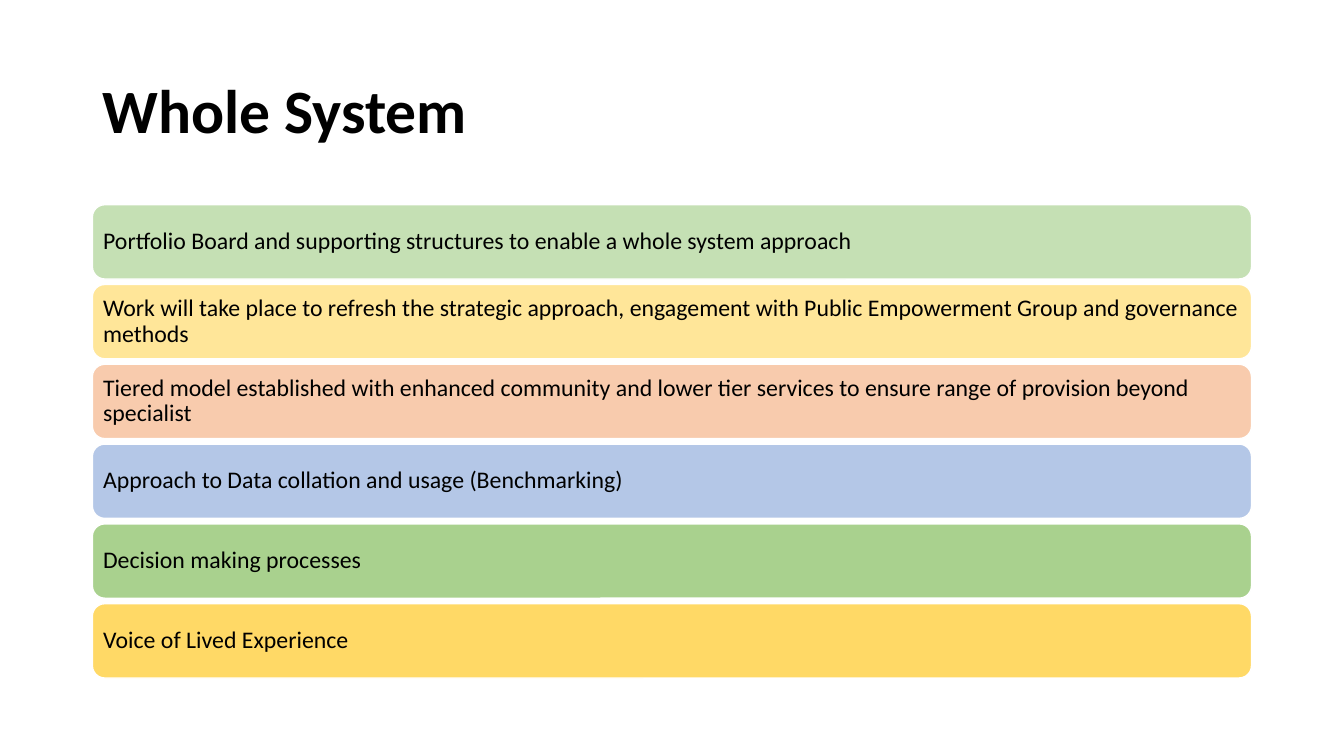
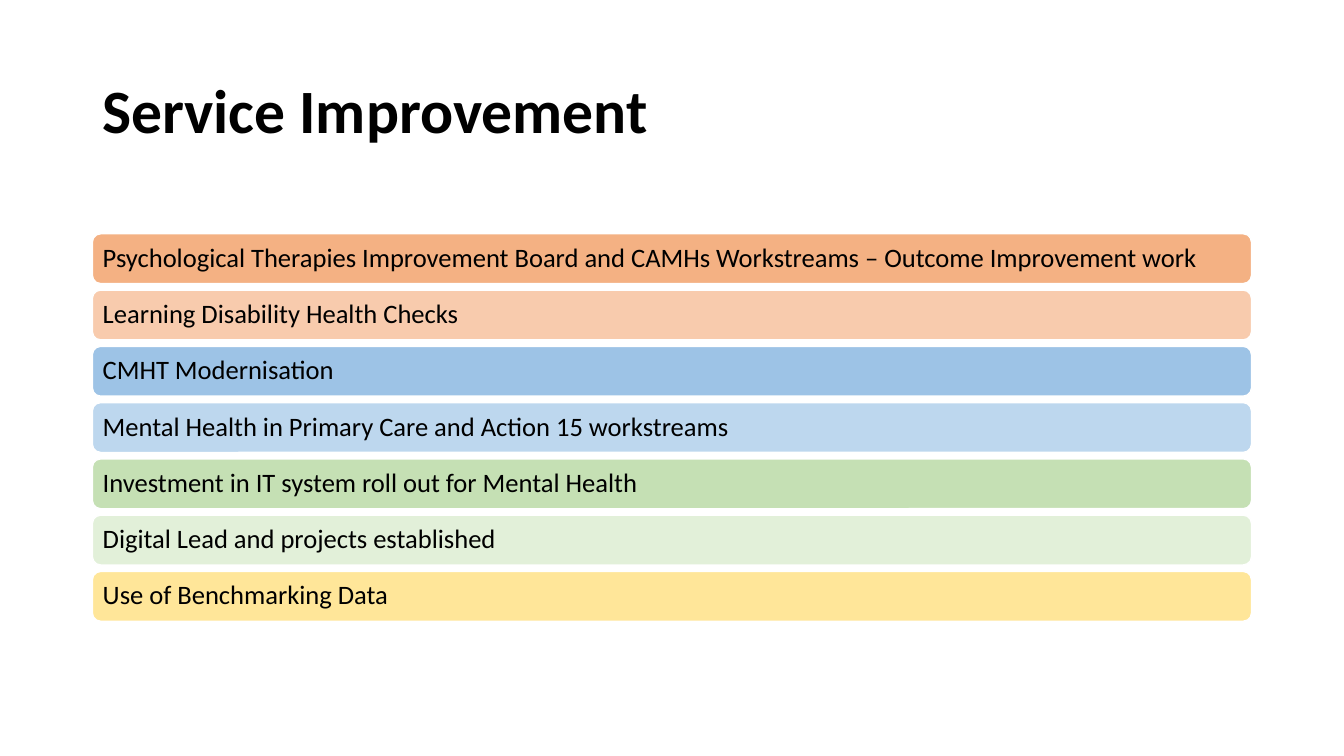
import dataclasses

import pptx
import pptx.dml.color
import pptx.enum.shapes
import pptx.enum.text
import pptx.util

Pt = pptx.util.Pt

COLORS = {
    "text": "000000",
    "outline": "FFFFFF",
    "green": "C5E0B4",
    "deep_green": "A9D18E",
    "pale_green": "E2F0D9",
    "yellow": "FFE699",
    "gold": "FFD966",
    "peach": "F8CBAD",
    "orange": "F4B183",
    "periwinkle": "B4C7E7",
    "blue": "9DC3E6",
    "pale_blue": "BDD7EE",
}
FONT = "Calibri"
LEFT, WIDTH = 66, 828
TITLE_TOP, TITLE_HEIGHT, TITLE_SIZE = 28.8, 104.4, 44


@dataclasses.dataclass(frozen=True)
class Bar:
    text: str
    color: str


@dataclasses.dataclass(frozen=True)
class BarList:
    title: str
    top: float
    height: float
    pitch: float
    size: float
    inset: float
    bars: tuple[Bar, ...]


BAR_LISTS = (
    BarList("Whole System", 146.2, 53.1, 57, 17, 5.1, (
        Bar("Portfolio Board and supporting structures to enable a whole system approach", "green"),
        Bar("Work will take place to refresh the strategic approach, engagement with "
            "Public Empowerment Group and governance methods", "yellow"),
        Bar("Tiered model established with enhanced community and lower tier services "
            "to ensure range of provision beyond specialist", "peach"),
        Bar("Approach to Data collation and usage (Benchmarking)", "periwinkle"),
        Bar("Decision making processes", "deep_green"),
        Bar("Voice of Lived Experience", "gold"),
    )),
    BarList("Service Improvement", 167, 35.6, 40.2, 19, 5.7, (
        Bar("Psychological Therapies Improvement Board and CAMHs Workstreams – "
            "Outcome Improvement work", "orange"),
        Bar("Learning Disability Health Checks", "peach"),
        Bar("CMHT Modernisation", "blue"),
        Bar("Mental Health in Primary Care and Action 15 workstreams", "pale_blue"),
        Bar("Investment in IT system roll out for Mental Health", "green"),
        Bar("Digital Lead and projects established", "pale_green"),
        Bar("Use of Benchmarking Data", "yellow"),
    )),
)


def rgb(name: str) -> pptx.dml.color.RGBColor:
    return pptx.dml.color.RGBColor.from_string(COLORS[name])


def write_text(box, text: str, size: float, bold: bool = False) -> None:
    frame = box.text_frame
    frame.word_wrap = True
    frame.vertical_anchor = pptx.enum.text.MSO_ANCHOR.MIDDLE
    para = frame.paragraphs[0]
    para.text = text
    para.alignment = pptx.enum.text.PP_ALIGN.LEFT
    para.line_spacing = 0.9
    para.font.name = FONT
    para.font.size = Pt(size)
    para.font.bold = bold
    para.font.color.rgb = rgb("text")


def add_title(page, title: str) -> None:
    box = page.shapes.add_textbox(Pt(LEFT), Pt(TITLE_TOP), Pt(WIDTH), Pt(TITLE_HEIGHT))
    write_text(box, title, TITLE_SIZE, bold=True)


def add_bar(page, bar: Bar, top: float, style: BarList) -> None:
    box = page.shapes.add_shape(
        pptx.enum.shapes.MSO_SHAPE.ROUNDED_RECTANGLE,
        Pt(LEFT), Pt(top), Pt(WIDTH), Pt(style.height),
    )
    box.shadow.inherit = False
    box.fill.solid()
    box.fill.fore_color.rgb = rgb(bar.color)
    box.line.color.rgb = rgb("outline")
    box.line.width = Pt(1)
    frame = box.text_frame
    frame.margin_left = frame.margin_right = Pt(style.inset)
    frame.margin_top = frame.margin_bottom = Pt(0)
    write_text(box, bar.text, style.size)


def add_page(deck, content: BarList) -> None:
    page = deck.slides.add_slide(deck.slide_layouts[6])
    add_title(page, content.title)
    for index, bar in enumerate(content.bars):
        add_bar(page, bar, content.top + index * content.pitch, content)


def main() -> None:
    deck = pptx.Presentation()
    deck.slide_width, deck.slide_height = Pt(960), Pt(540)
    for content in BAR_LISTS:
        add_page(deck, content)
    deck.save("out.pptx")


if __name__ == "__main__":
    main()
